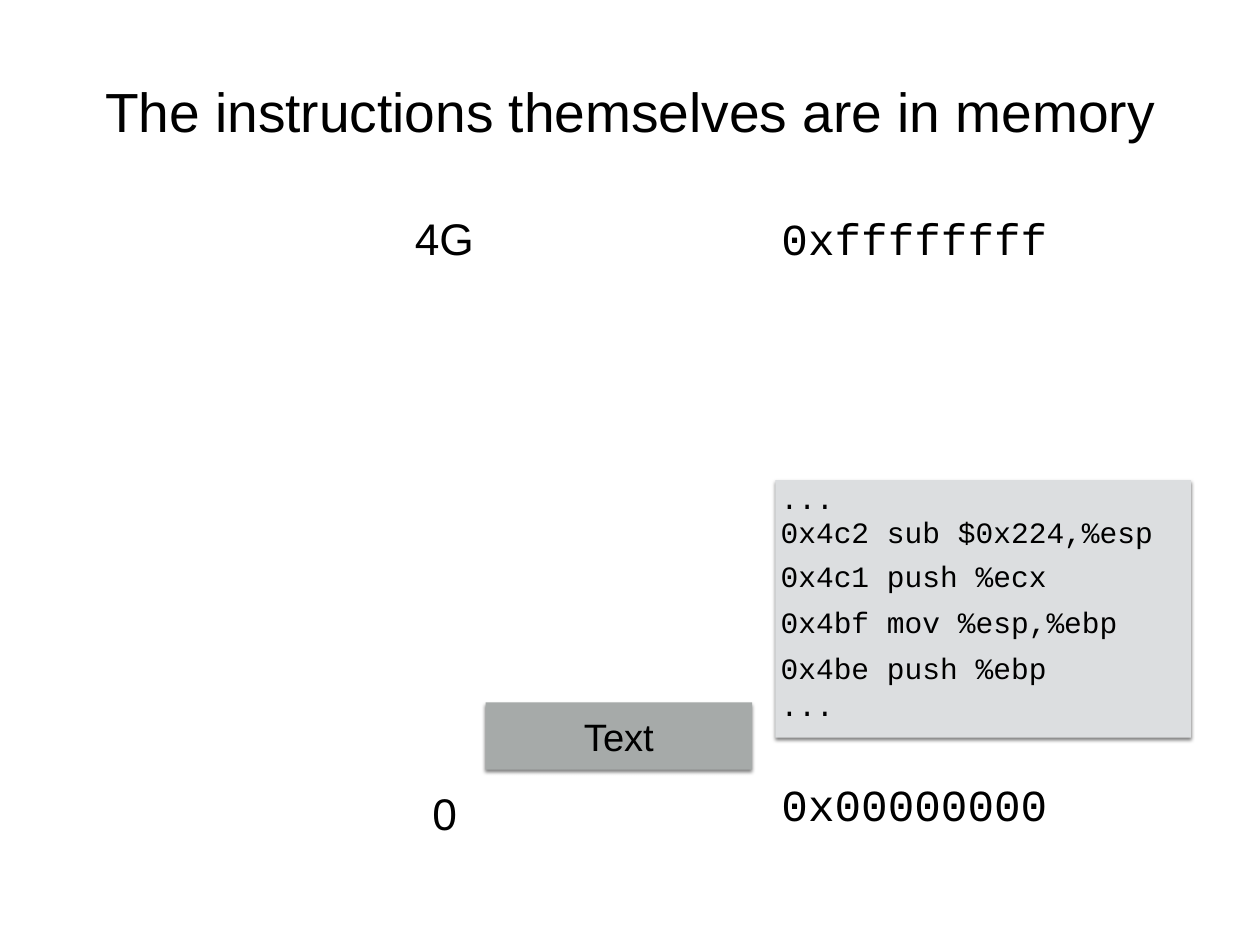
from lxml.etree import SubElement as Sub
from pptx import Presentation
from pptx.dml.color import RGBColor as Rgb
from pptx.enum.shapes import MSO_SHAPE as Form
from pptx.enum.text import MSO_ANCHOR as Anchor, MSO_AUTO_SIZE as Auto, PP_ALIGN as Align
from pptx.oxml.ns import qn
from pptx.util import Pt

PX = 9144
LEFT = 875
PAD = 6
SHADE = {"blurRad": 3 * 12700, "dist": 2 * 12700, "dir": 90 * 60000, "rotWithShape": 0}


def emu(*sizes):
    """Turn lengths in px into EMU."""
    return [size * PX for size in sizes]


def tint(code):
    """Turn a hex string into a colour."""
    return Rgb.from_string(code)


class Deck:
    """Holds the style and the current slide."""

    sans = "Arial"
    mono = "Courier New"
    ink = "000000"

    def __init__(self, wide, high):
        """Start a deck with one titled slide."""
        self.deck = Presentation()
        self.deck.slide_width, self.deck.slide_height = emu(wide, high)
        self.slide = self.deck.slides.add_slide(self.deck.slide_layouts[5])

    def letter(self, shape, text, size, face, align, pad=0, **more):
        """Set and format the text of a shape."""
        frame = shape.text_frame
        form = {"word_wrap": True, "auto_size": Auto.NONE, "vertical_anchor": Anchor.MIDDLE}
        for side in ("left", "top", "right", "bottom"):
            form["margin_" + side] = pad * PX
        for name, value in (form | more).items():
            setattr(frame, name, value)
        line = frame.paragraphs[0]
        line.alignment = align
        run = line.add_run()
        run.text = text
        for name, value in {"name": face, "size": Pt(size), "bold": False}.items():
            setattr(run.font, name, value)
        run.font.color.rgb = tint(self.ink)

    def title(self, text, size, *box):
        """Place and fill the title."""
        shape = self.slide.shapes.title
        for name, value in zip(("left", "top", "width", "height"), emu(*box)):
            setattr(shape, name, value)
        self.letter(shape, text, size, self.sans, Align.CENTER)

    def group(self):
        """Add a group and return its shapes."""
        return self.slide.shapes.add_group_shape().shapes

    def block(self, home, fill, *box):
        """Add a filled rectangle with a soft shadow."""
        shape = home.add_shape(Form.RECTANGLE, *emu(*box))
        shape.fill.solid()
        shape.fill.fore_color.rgb = tint(fill)
        shape.line.fill.background()
        shape.shadow.inherit = False
        glow = shape._element.spPr.find(qn("a:effectLst"))
        outer = Sub(glow, qn("a:outerShdw"), {name: str(value) for name, value in SHADE.items()})
        black = Sub(outer, qn("a:srgbClr"), val=self.ink)
        Sub(black, qn("a:alpha"), val="50000")
        return shape

    def label(self, home, text, size, face, align, *box):
        """Add a text box that fits its one line."""
        shape = home.add_textbox(*emu(*box))
        self.letter(shape, text, size, face, align, PAD,
                    word_wrap=False, auto_size=Auto.SHAPE_TO_FIT_TEXT)

    def code(self, home, text, size, align, top, high):
        """Add a code line as wide as its letters."""
        wide = len(text) * size * 5 // 6 + 2 * PAD + 1
        self.label(home, text, size, self.mono, align, LEFT, top, wide, high)


def main():
    """Build and save the slide."""
    deck = Deck(1422, 1067)
    base = deck.slide.shapes
    deck.title("The instructions themselves are in memory", 44.8, 104, 49, 1214, 151)

    part = deck.block(base, "A6AAA9", 548, 793, 301, 76)
    deck.letter(part, "Text", 31, deck.sans, Align.CENTER)

    for text, left, top, wide in (("0", 482, 882, 40), ("4G", 462, 233, 79)):
        deck.label(base, text, 36, deck.sans, Align.CENTER, left, top, wide, 71)

    ends = deck.group()
    for text, top in (("0xffffffff", 233), ("0x00000000", 872)):
        deck.code(ends, text, 36, Align.RIGHT, top, 71)

    dump = deck.group()
    deck.block(dump, "DCDEE0", LEFT, 542, 469, 291)
    for text, top in (
        ("...", 536),
        ("0x4c2 sub $0x224,%esp", 575),
        ("0x4c1 push %ecx", 624),
        ("0x4bf mov %esp,%ebp", 676),
        ("0x4be push %ebp", 728),
        ("...", 770),
    ):
        deck.code(dump, text, 24, Align.LEFT, top, 51)

    deck.deck.save("out.pptx")


if __name__ == "__main__":
    main()
